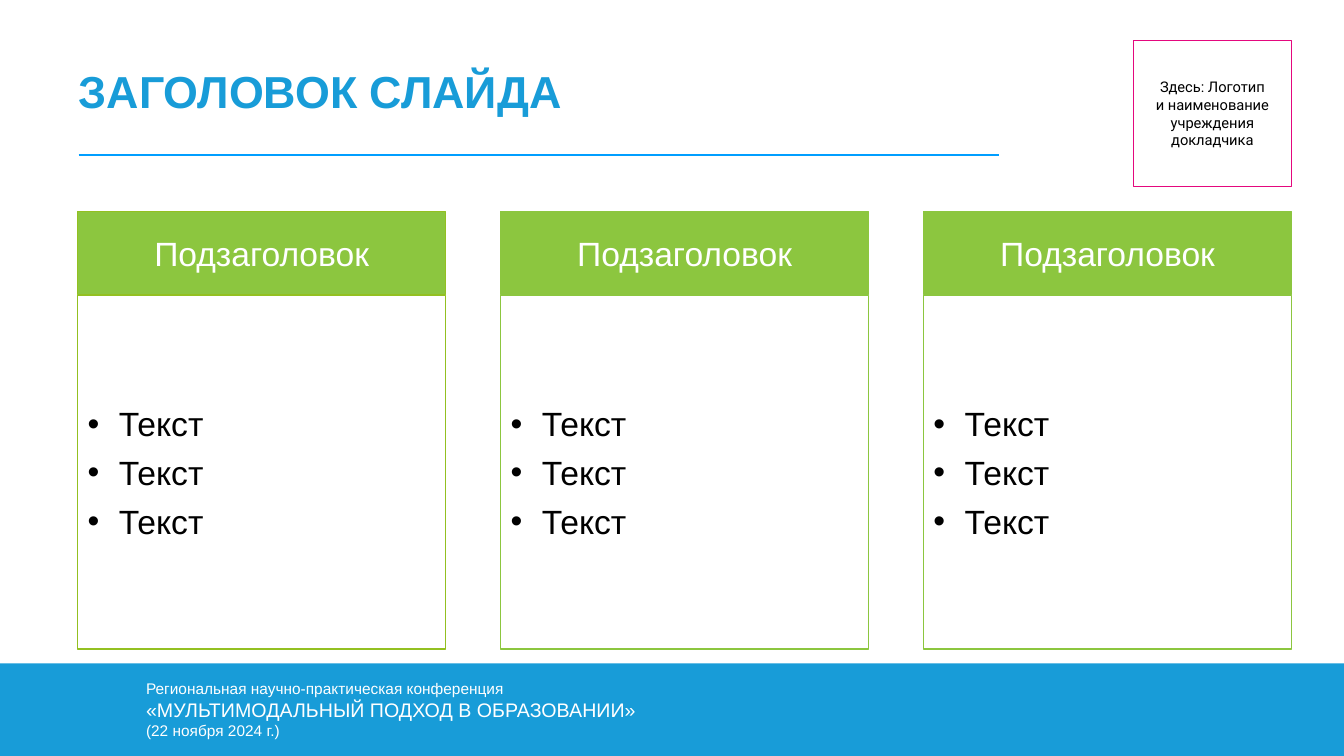
from dataclasses import dataclass
from typing import Any

from lxml.etree import SubElement
from pptx import Presentation
from pptx.dml.color import RGBColor
from pptx.enum.shapes import MSO_CONNECTOR, MSO_SHAPE
from pptx.enum.text import MSO_ANCHOR, MSO_AUTO_SIZE, PP_ALIGN
from pptx.oxml.ns import qn
from pptx.util import Inches, Pt

WHITE = RGBColor(0xFF, 0xFF, 0xFF)
BLACK = RGBColor(0x00, 0x00, 0x00)
BLUE = RGBColor(0x18, 0x9C, 0xD8)
RULE_BLUE = RGBColor(0x00, 0x9E, 0xFF)
PINK = RGBColor(0xE4, 0x08, 0x7E)
GREEN = RGBColor(0x8C, 0xC6, 0x3F)
OLIVE = RGBColor(0x93, 0xC0, 0x21)

MARGIN = 0.78
FIRST_LEFT, LAST_LEFT = 0.77, 9.16
COLUMN_WIDTH = 3.65
HEADER_TOP, HEADER_HEIGHT = 2.1, 0.82
LIST_TOP, LIST_HEIGHT = 2.93, 3.51
INDENT = 0.31


@dataclass(frozen=True)
class Box:
    left: float
    top: float
    width: float
    height: float

    def emu(self) -> tuple:
        return tuple(Inches(v) for v in (self.left, self.top, self.width, self.height))


@dataclass(frozen=True)
class Column:
    heading: str
    items: tuple[str, ...]
    border: RGBColor


@dataclass(frozen=True)
class FooterLine:
    text: str
    size: float


COLUMNS = [Column("Подзаголовок", ("Текст",) * 3, border)
           for border in (OLIVE, GREEN, GREEN)]
FOOTER_LINES = [
    FooterLine("Региональная научно-практическая конференция", 11),
    FooterLine("«МУЛЬТИМОДАЛЬНЫЙ ПОДХОД В ОБРАЗОВАНИИ»", 14),
    FooterLine("(22 ноября 2024 г.)", 11),
]


def apply_format(target: Any, values: dict[str, Any]) -> None:
    for name, value in values.items():
        setattr(target, name, value)


def format_font(font: Any, size: float, color: RGBColor,
                name: str = "Arial", bold: bool = False) -> None:
    apply_format(font, {"name": name, "size": Pt(size), "bold": bold})
    font.color.rgb = color


def add_rectangle(slide: Any, box: Box, fill: RGBColor | None = None,
                  border: RGBColor | None = None) -> Any:
    rectangle = slide.shapes.add_shape(MSO_SHAPE.RECTANGLE, *box.emu())
    rectangle.shadow.inherit = False
    if fill is None:
        rectangle.fill.background()
    else:
        rectangle.fill.solid()
        rectangle.fill.fore_color.rgb = fill
    if border is None:
        rectangle.line.fill.background()
    else:
        rectangle.line.color.rgb = border
        rectangle.line.width = Pt(1)
    apply_format(rectangle.text_frame,
                 {"word_wrap": True, "vertical_anchor": MSO_ANCHOR.MIDDLE})
    return rectangle


def add_paragraph(frame: Any, index: int, text: str) -> Any:
    paragraph = frame.add_paragraph() if index else frame.paragraphs[0]
    paragraph.text = text
    paragraph.alignment = PP_ALIGN.LEFT
    return paragraph


def add_bullet(paragraph: Any) -> None:
    properties = paragraph._p.get_or_add_pPr()
    properties.set("marL", str(Inches(INDENT)))
    properties.set("indent", str(-Inches(INDENT)))
    SubElement(properties, qn("a:buFont")).set("typeface", "Arial")
    SubElement(properties, qn("a:buChar")).set("char", "•")


def add_footer(slide: Any) -> None:
    add_rectangle(slide, Box(0, 6.58, 13.33, 0.92), fill=BLUE)
    conference = slide.shapes.add_textbox(*Box(1.35, 6.69, 5.35, 0.71).emu()).text_frame
    conference.word_wrap = True
    for index, line in enumerate(FOOTER_LINES):
        paragraph = add_paragraph(conference, index, line.text)
        format_font(paragraph.font, line.size, WHITE)


def add_title(slide: Any) -> None:
    title = slide.shapes.title
    apply_format(title, dict(zip(("left", "top", "width", "height"),
                                 Box(MARGIN, 0.64, 11.64, 0.82).emu())))
    apply_format(title.text_frame, {
        "word_wrap": True, "auto_size": MSO_AUTO_SIZE.NONE,
        "vertical_anchor": MSO_ANCHOR.TOP, "margin_left": 0,
    })
    paragraph = add_paragraph(title.text_frame, 0, "ЗАГОЛОВОК СЛАЙДА")
    paragraph.line_spacing = 0.9
    format_font(paragraph.font, 32, BLUE, bold=True)

    rule = slide.shapes.add_connector(MSO_CONNECTOR.STRAIGHT, Inches(MARGIN),
                                      Inches(1.54), Inches(9.91), Inches(1.54))
    rule.line.color.rgb = RULE_BLUE
    rule.line.width = Pt(1.5)
    SubElement(rule._element.spPr, qn("a:effectLst"))


def add_affiliation(slide: Any) -> None:
    frame = add_rectangle(slide, Box(11.24, 0.4, 1.57, 1.45), border=PINK).text_frame
    paragraph = add_paragraph(
        frame, 0, "Здесь: Логотип\vи наименование учреждения докладчика")
    paragraph.alignment = PP_ALIGN.CENTER
    format_font(paragraph.font, 10.5, BLACK, name="Roboto")


def add_column(slide: Any, left: float, column: Column) -> None:
    header = add_rectangle(slide, Box(left, HEADER_TOP, COLUMN_WIDTH, HEADER_HEIGHT),
                           fill=GREEN, border=column.border)
    heading = add_paragraph(header.text_frame, 0, column.heading)
    heading.alignment = PP_ALIGN.CENTER
    format_font(heading.font, 24, WHITE)

    panel = add_rectangle(slide, Box(left, LIST_TOP, COLUMN_WIDTH, LIST_HEIGHT),
                          border=column.border)
    for index, item in enumerate(column.items):
        paragraph = add_paragraph(panel.text_frame, index, item)
        paragraph.space_after = Pt(6)
        add_bullet(paragraph)
        format_font(paragraph.font, 24, BLACK)


def main() -> None:
    presentation = Presentation()
    presentation.slide_width = Inches(13.33)
    presentation.slide_height = Inches(7.5)
    slide = presentation.slides.add_slide(presentation.slide_layouts[5])

    # Conference footer, title and affiliation
    add_footer(slide)
    add_title(slide)
    add_affiliation(slide)

    # Three equally spaced columns
    pitch = (LAST_LEFT - FIRST_LEFT) / (len(COLUMNS) - 1)
    for index, column in enumerate(COLUMNS):
        add_column(slide, FIRST_LEFT + index * pitch, column)

    presentation.save("out.pptx")


if __name__ == "__main__":
    main()
